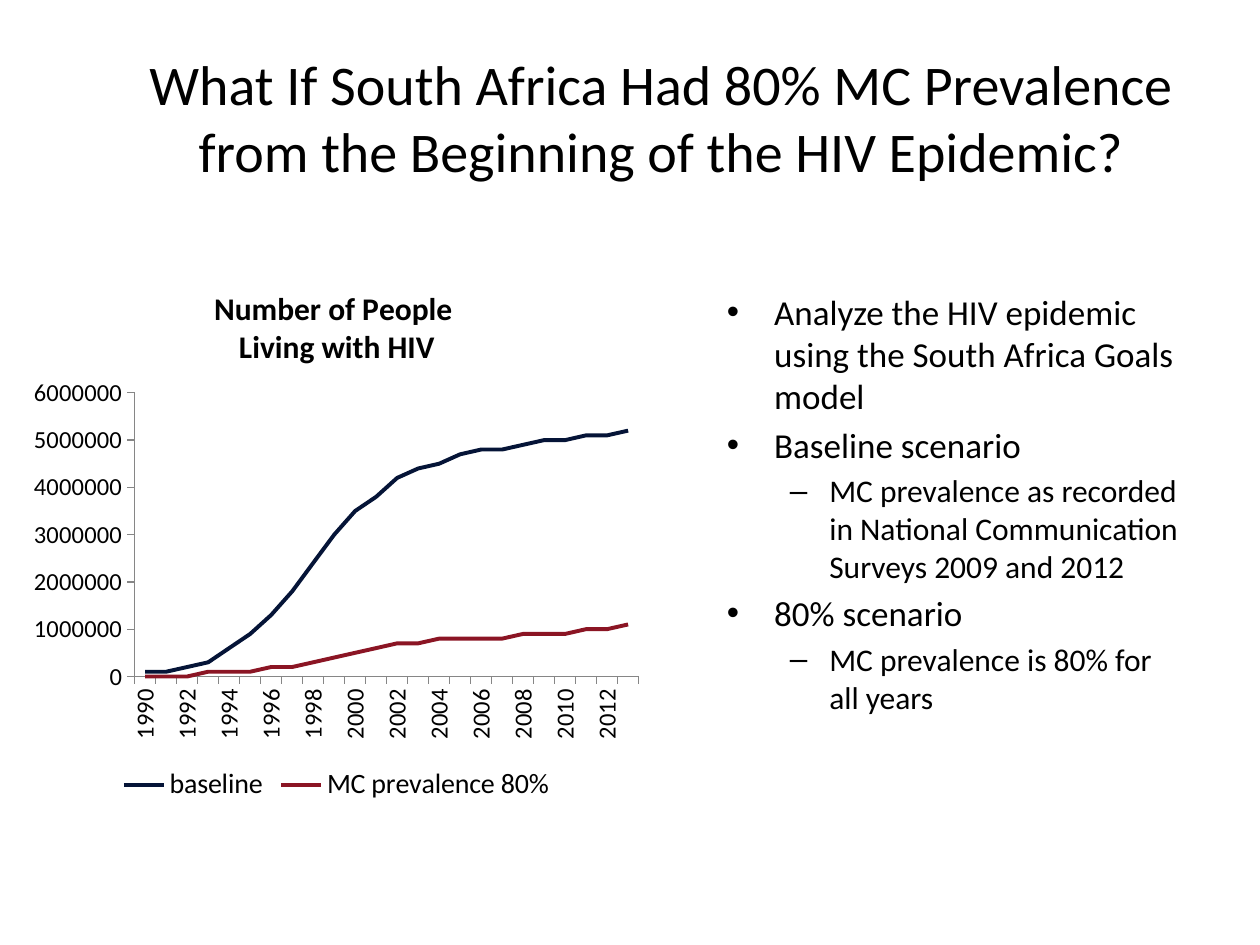
from lxml.etree import SubElement
from pptx import Presentation
from pptx.chart.data import CategoryChartData
from pptx.dml.color import RGBColor
from pptx.enum.chart import XL_CHART_TYPE, XL_LEGEND_POSITION, XL_TICK_MARK
from pptx.enum.text import MSO_ANCHOR, MSO_AUTO_SIZE, PP_ALIGN
from pptx.oxml import parse_xml
from pptx.oxml.ns import nsdecls, qn
from pptx.util import Cm, Pt

STYLE = {"font": "Calibri", "text": "000000", "axis": "868686"}
HEADING = "What If South Africa Had 80% MC Prevalence from the Beginning of the HIV Epidemic?"
POINTS = [
    (0, "Analyze the HIV epidemic using the South Africa Goals model"),
    (0, "Baseline scenario"),
    (1, "MC prevalence as recorded in National Communication Surveys 2009 and 2012"),
    (0, "80% scenario"),
    (1, "MC prevalence is 80% for all years"),
]
LEVEL_SIZES = [20, 18]
CHART_TITLE = ["Number of People", " Living with HIV"]
YEARS = [str(year) for year in range(1990, 2014)]
UNIT = 100000
SERIES = [
    ("baseline", "051437", [1, 1, 2, 3, 6, 9, 13, 18, 24, 30, 35, 38,
                            42, 44, 45, 47, 48, 48, 49, 50, 50, 51, 51, 52]),
    ("MC prevalence 80%", "8B1524", [0, 0, 0, 1, 1, 1, 2, 2, 3, 4, 5, 6,
                                     7, 7, 8, 8, 8, 8, 9, 9, 9, 10, 10, 11]),
]


def color(value):
    return RGBColor.from_string(value)


def apply(target, values):
    for name, value in values.items():
        setattr(target, name, value)


def manual_layout(inner=False, **fractions):
    layout = parse_xml(f"<c:layout {nsdecls('c')}><c:manualLayout/></c:layout>")
    values = {"layoutTarget": "inner"} if inner else {}
    values.update({"xMode": "edge", "yMode": "edge"}, **fractions)
    for name, value in values.items():
        SubElement(layout[0], qn(f"c:{name}")).set("val", str(value))
    return layout


class SlideBuilder:
    def __init__(self, deck, style):
        self.style = style
        self.slide = deck.slides.add_slide(deck.slide_layouts[1])

    def format_font(self, font, size, bold=False):
        apply(font, {"name": self.style["font"], "size": Pt(size), "bold": bold})
        font.color.rgb = color(self.style["text"])

    def place(self, shape, left, top, width, height):
        apply(shape, {"left": Cm(left), "top": Cm(top),
                      "width": Cm(width), "height": Cm(height)})

    def title(self, text, box, size):
        shape = self.slide.shapes.title
        self.place(shape, *box)
        frame = shape.text_frame
        apply(frame, {"text": text, "word_wrap": True, "auto_size": MSO_AUTO_SIZE.NONE,
                      "vertical_anchor": MSO_ANCHOR.MIDDLE})
        para = frame.paragraphs[0]
        para.alignment = PP_ALIGN.CENTER
        self.format_font(para.font, size)

    def bullets(self, points, box):
        shape = self.slide.placeholders[1]
        self.place(shape, *box)
        frame = shape.text_frame
        apply(frame, {"word_wrap": True, "auto_size": MSO_AUTO_SIZE.NONE})
        for index, (level, text) in enumerate(points):
            para = frame.add_paragraph() if index else frame.paragraphs[0]
            apply(para, {"text": text, "level": level})
            self.format_font(para.font, LEVEL_SIZES[level])
        frame.paragraphs[0].space_before = Pt(0)

    def line_chart(self, title_lines, categories, series, box):
        data = CategoryChartData(number_format="0")
        data.categories = categories
        for name, _, values in series:
            data.add_series(name, [value * UNIT for value in values])
        chart = self.slide.shapes.add_chart(
            XL_CHART_TYPE.LINE, *map(Cm, box), data).chart
        self.format_font(chart.font, 16)
        self.chart_title(chart, title_lines)
        self.axes(chart)
        chart.has_legend = True
        apply(chart.legend, {"position": XL_LEGEND_POSITION.BOTTOM,
                             "include_in_layout": False})
        self.format_font(chart.legend.font, 16)
        plot = chart.plots[0]
        plot.vary_by_categories = False
        for line, (_, line_color, _) in zip(plot.series, series):
            line.smooth = False
            line.format.line.width = Pt(2.25)
            line.format.line.color.rgb = color(line_color)
        area = chart._chartSpace.chart.plotArea
        for layout in area.findall(qn("c:layout")):
            area.remove(layout)
        area.insert(0, manual_layout(inner=True, x=0.18, y=0.24, w=0.8, h=0.52))

    def chart_title(self, chart, lines):
        chart.has_title = True
        frame = chart.chart_title.text_frame
        for index, text in enumerate(lines):
            para = frame.add_paragraph() if index else frame.paragraphs[0]
            para.alignment = PP_ALIGN.CENTER
            span = para.add_run()
            span.text = text
            self.format_font(span.font, 18, bold=True)
        title = chart._chartSpace.chart.find(qn("c:title"))
        for layout in title.findall(qn("c:layout")):
            title.remove(layout)
        title.find(qn("c:tx")).addnext(manual_layout(x=0.3, y=0.04))
        chart.chart_title.include_in_layout = False

    def axes(self, chart):
        for axis in (chart.category_axis, chart.value_axis):
            apply(axis, {"has_major_gridlines": False,
                         "major_tick_mark": XL_TICK_MARK.OUTSIDE,
                         "minor_tick_mark": XL_TICK_MARK.NONE})
            axis.format.line.width = Pt(0.75)
            axis.format.line.color.rgb = color(self.style["axis"])
            self.format_font(axis.tick_labels.font, 14)
        apply(chart.value_axis, {"minimum_scale": 0, "maximum_scale": 6000000,
                                 "major_unit": 1000000})
        category = chart.category_axis._element
        category.find(qn("c:txPr")).find(qn("a:bodyPr")).set("rot", "-5400000")
        skip = parse_xml(f'<c:tickLblSkip {nsdecls("c")} val="2"/>')
        category.find(qn("c:noMultiLvlLbl")).addprevious(skip)


def main():
    deck = Presentation()
    apply(deck, {"slide_width": Cm(25.4), "slide_height": Cm(19.05)})
    page = SlideBuilder(deck, STYLE)
    page.title(HEADING, (2.54, 0.76, 21.59, 3.18), 32)
    page.bullets(POINTS, (14.4, 5.72, 9.73, 11.3))
    page.line_chart(CHART_TITLE, YEARS, SERIES, (0.43, 5.28, 12.7, 11))
    deck.save("out.pptx")


if __name__ == "__main__":
    main()
